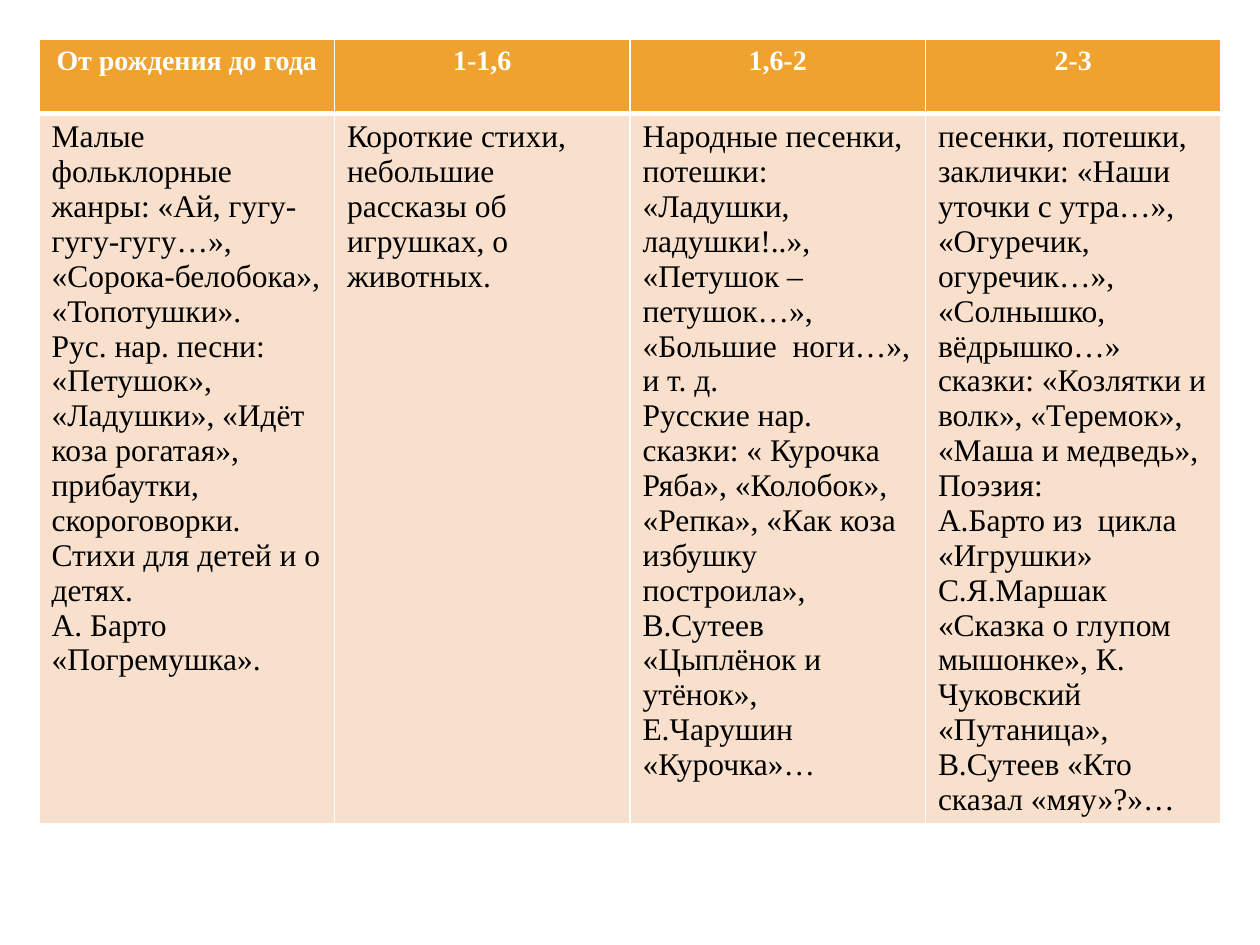
from lxml import etree
from pptx import Presentation
from pptx.dml.color import RGBColor
from pptx.enum import text
from pptx.oxml.ns import qn
from pptx.util import Inches, Pt

# Content: age group and its reading list, one paragraph per string
AGE_GROUPS = [
    ("От рождения до года", [
        "Малые фольклорные жанры: «Ай, гугу-гугу-гугу…», «Сорока-белобока», «Топотушки».",
        "Рус. нар. песни: «Петушок», «Ладушки», «Идёт коза рогатая», прибаутки, скороговорки.",
        "Стихи для детей и о детях.",
        "А. Барто «Погремушка».",
    ]),
    ("1-1,6", [
        "Короткие стихи, небольшие рассказы об игрушках, о животных.",
    ]),
    ("1,6-2", [
        "Народные песенки, потешки: «Ладушки, ладушки!..», «Петушок –петушок…», "
        "«Большие  ноги…», и т. д.",
        "Русские нар. сказки: « Курочка Ряба», «Колобок», «Репка», "
        "«Как коза избушку построила»,",
        "В.Сутеев «Цыплёнок и утёнок», Е.Чарушин «Курочка»…",
    ]),
    ("2-3", [
        "песенки, потешки, заклички: «Наши уточки с утра…», «Огуречик, огуречик…», "
        "«Солнышко, вёдрышко…»",
        "сказки: «Козлятки и волк», «Теремок», «Маша и медведь»,",
        "Поэзия:",
        "А.Барто из  цикла «Игрушки»",
        "С.Я.Маршак «Сказка о глупом мышонке», К. Чуковский «Путаница», "
        "В.Сутеев «Кто сказал «мяу»?»…",
    ]),
]

FONT = "Times New Roman"
WHITE = RGBColor(0xFF, 0xFF, 0xFF)
BLACK = RGBColor(0, 0, 0)
ORANGE = RGBColor(0xF0, 0xA2, 0x2E)
PEACH = RGBColor(0xF9, 0xE0, 0xCD)

MARGIN = 0.31
TABLE_WIDTH = 9.38
ROW_HEIGHTS = (0.59, 5.63)


def set_borders(cell, color, **widths):
    """Draw cell borders; widths in points, keyed L, R, T, B."""
    properties = cell._tc.get_or_add_tcPr()
    for side, width in widths.items():
        line = etree.SubElement(properties, qn(f"a:ln{side}"), w=str(Pt(width)))
        fill = etree.SubElement(line, qn("a:solidFill"))
        etree.SubElement(fill, qn("a:srgbClr"), val=str(color))


def write(frame, paragraphs, size, color, bold=False, align=text.PP_ALIGN.LEFT):
    for index, words in enumerate(paragraphs):
        paragraph = frame.paragraphs[0] if index == 0 else frame.add_paragraph()
        paragraph.alignment = align
        run = paragraph.add_run()
        run.text = words
        run.font.name = FONT
        run.font.size = Pt(size)
        run.font.bold = bold
        run.font.color.rgb = color


def fill_cell(cell, color):
    cell.fill.solid()
    cell.fill.fore_color.rgb = color


def main():
    prs = Presentation()
    prs.slide_width, prs.slide_height = Inches(10), Inches(7.5)
    slide = prs.slides.add_slide(prs.slide_layouts[6])

    # Table grid
    reading = slide.shapes.add_table(
        len(ROW_HEIGHTS), len(AGE_GROUPS), Inches(MARGIN), Inches(MARGIN),
        Inches(TABLE_WIDTH), Inches(sum(ROW_HEIGHTS))).table
    reading.horz_banding = False
    for row, height in zip(reading.rows, ROW_HEIGHTS):
        row.height = Inches(height)

    # One column per age group
    for column, (age, works) in enumerate(AGE_GROUPS):
        header, body = reading.cell(0, column), reading.cell(1, column)
        set_borders(header, WHITE, L=1, R=1, T=1, B=3)
        set_borders(body, WHITE, L=1, R=1, T=3, B=1)
        fill_cell(header, ORANGE)
        fill_cell(body, PEACH)
        write(header.text_frame, [age], 16, WHITE, bold=True,
              align=text.PP_ALIGN.CENTER)
        write(body.text_frame, works, 18, BLACK)

    prs.save("out.pptx")


if __name__ == "__main__":
    main()
